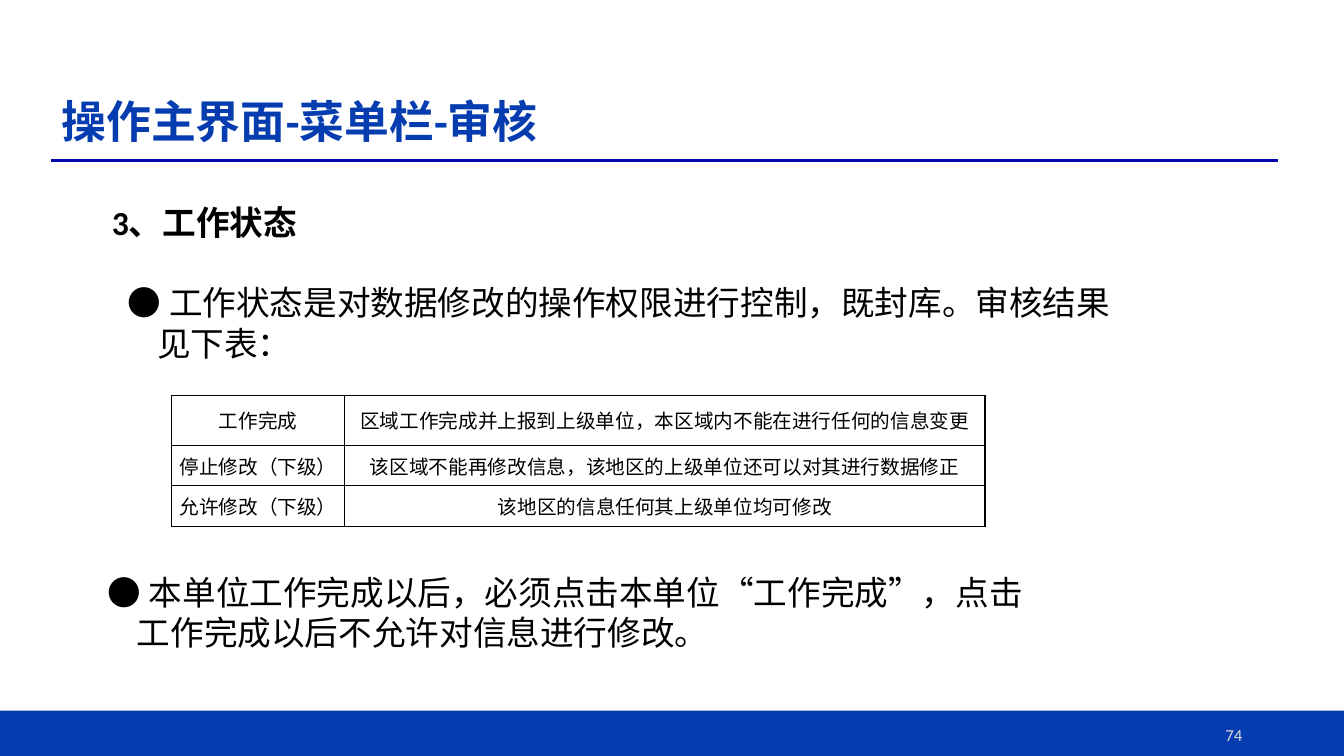
from lxml import etree
from pptx import Presentation
from pptx.dml.color import RGBColor
from pptx.enum import shapes, text
from pptx.oxml import ns
from pptx.util import Inches, Pt

HUES = {"blue": "053CAF", "rule": "0506AF", "black": "000000",
        "grid": "080000", "gray": "D9D9D9"}
LATIN, HAN = "Calibri", "Noto Sans CJK SC"

STATES = [
    ("工作完成", "区域工作完成并上报到上级单位，本区域内不能在进行任何的信息变更"),
    ("停止修改（下级）", "该区域不能再修改信息，该地区的上级单位还可以对其进行数据修正"),
    ("允许修改（下级）", "该地区的信息任何其上级单位均可修改"),
]
COLS, ROWS = (1.72, 6.35), (0.5, 0.4, 0.4)

NOTES = [
    ((1.17, 2.75, 10.01, 0.91),
     "工作状态是对数据修改的操作权限进行控制，既封库。审核结果见下表："),
    ((0.97, 5.62, 9.54, 0.91),
     "本单位工作完成以后，必须点击本单位“工作完成”，点击工作完成以后不允许对信息进行修改。"),
]


def hue(name):
    return RGBColor.from_string(HUES[name])


def apply(item, form):
    for key, val in form.items():
        setattr(item, key, val)


def sub(node, tag, **attrs):
    return etree.SubElement(node, ns.qn(tag), **attrs)


def box(at):
    return [Inches(n) for n in at]


def add_run(par, words, size, color="black", face=LATIN, bold=False):
    run = par.add_run()
    run.text = words
    apply(run.font, {"size": Pt(size), "name": face, "bold": bold})
    run.font.color.rgb = hue(color)
    sub(run.font._element, "a:ea", typeface=HAN)


def place(holder, at, anchor):
    """Move a placeholder and return its first paragraph."""
    apply(holder, dict(zip(("left", "top", "width", "height"), box(at))))
    frame = holder.text_frame
    apply(frame, {"vertical_anchor": anchor, "word_wrap": True,
                  "auto_size": text.MSO_AUTO_SIZE.NONE})
    par = frame.paragraphs[0]
    apply(par, {"alignment": text.PP_ALIGN.LEFT, "line_spacing": 0.9,
                "space_before": Pt(0)})
    return par


def add_text(slide, at, anchor=text.MSO_ANCHOR.TOP):
    frame = slide.shapes.add_textbox(*box(at)).text_frame
    apply(frame, {"word_wrap": True, "vertical_anchor": anchor})
    return frame.paragraphs[0]


def add_note(slide, at, words):
    par = add_text(slide, at)
    props = par._p.get_or_add_pPr()
    props.set("marL", str(Inches(0.29)))
    props.set("indent", str(Inches(-0.29)))
    add_run(par, "● ", 24, face="Arial")
    add_run(par, words, 24)


def add_rule(slide):
    rule = slide.shapes.add_connector(
        shapes.MSO_CONNECTOR.STRAIGHT, *box((0.51, 1.59, 12.68, 1.59)))
    rule.line.color.rgb = hue("rule")
    rule.line.width = Pt(2.25)
    sub(rule._element.spPr, "a:effectLst")


def add_band(slide):
    band = slide.shapes.add_shape(
        shapes.MSO_SHAPE.RECTANGLE, *box((0, 7.05, 13.34, 0.47)))
    band.shadow.inherit = False
    band.fill.solid()
    band.fill.fore_color.rgb = hue("blue")
    band.line.fill.background()


def edge(cell):
    props = cell._tc.get_or_add_tcPr()
    for spot, side in enumerate("LRTB"):
        line = etree.Element(ns.qn("a:ln" + side), w=str(Pt(1)))
        sub(sub(line, "a:solidFill"), "a:srgbClr", val=HUES["grid"])
        props.insert(spot, line)


def add_grid(slide):
    grid = slide.shapes.add_table(
        len(ROWS), len(COLS),
        *box((1.7, 3.92, sum(COLS), sum(ROWS)))).table
    apply(grid, {"first_row": False, "horz_banding": False})
    for col, width in zip(grid.columns, COLS):
        col.width = Inches(width)
    for row, height, state in zip(grid.rows, ROWS, STATES):
        row.height = Inches(height)
        for cell, words in zip(row.cells, state):
            apply(cell, {"margin_left": Inches(0.07),
                         "margin_right": Inches(0.07),
                         "margin_top": 0, "margin_bottom": 0,
                         "vertical_anchor": text.MSO_ANCHOR.MIDDLE})
            cell.fill.background()
            edge(cell)
            par = cell.text_frame.paragraphs[0]
            par.alignment = text.PP_ALIGN.CENTER
            add_run(par, words, 14, face=HAN)


def main():
    deck = Presentation()
    apply(deck, {"slide_width": Inches(13.33), "slide_height": Inches(7.5)})
    slide = deck.slides.add_slide(deck.slide_layouts[1])

    # Title, rule and footer band
    title = place(slide.shapes.title, (0.51, 0.51, 12.17, 1.45),
                  text.MSO_ANCHOR.MIDDLE)
    add_run(title, "操作主界面-菜单栏-审核", 32, "blue", bold=True)
    add_rule(slide)
    add_band(slide)

    # Section heading
    head = place(slide.placeholders[1], (0.51, 2, 12.17, 4.76),
                 text.MSO_ANCHOR.TOP)
    props = head._p.get_or_add_pPr()
    props.set("marL", str(Inches(0.5)))
    props.set("indent", "0")
    sub(props, "a:buNone")
    add_run(head, "3、工作状态", 24, bold=True)

    # Notes around the table of states
    for at, words in NOTES:
        add_note(slide, at, words)
    add_grid(slide)

    # Page number
    page = add_text(slide, (9.42, 7.09, 3, 0.4), text.MSO_ANCHOR.MIDDLE)
    page.alignment = text.PP_ALIGN.RIGHT
    add_run(page, "74", 12, "gray")

    deck.save("out.pptx")


if __name__ == "__main__":
    main()
